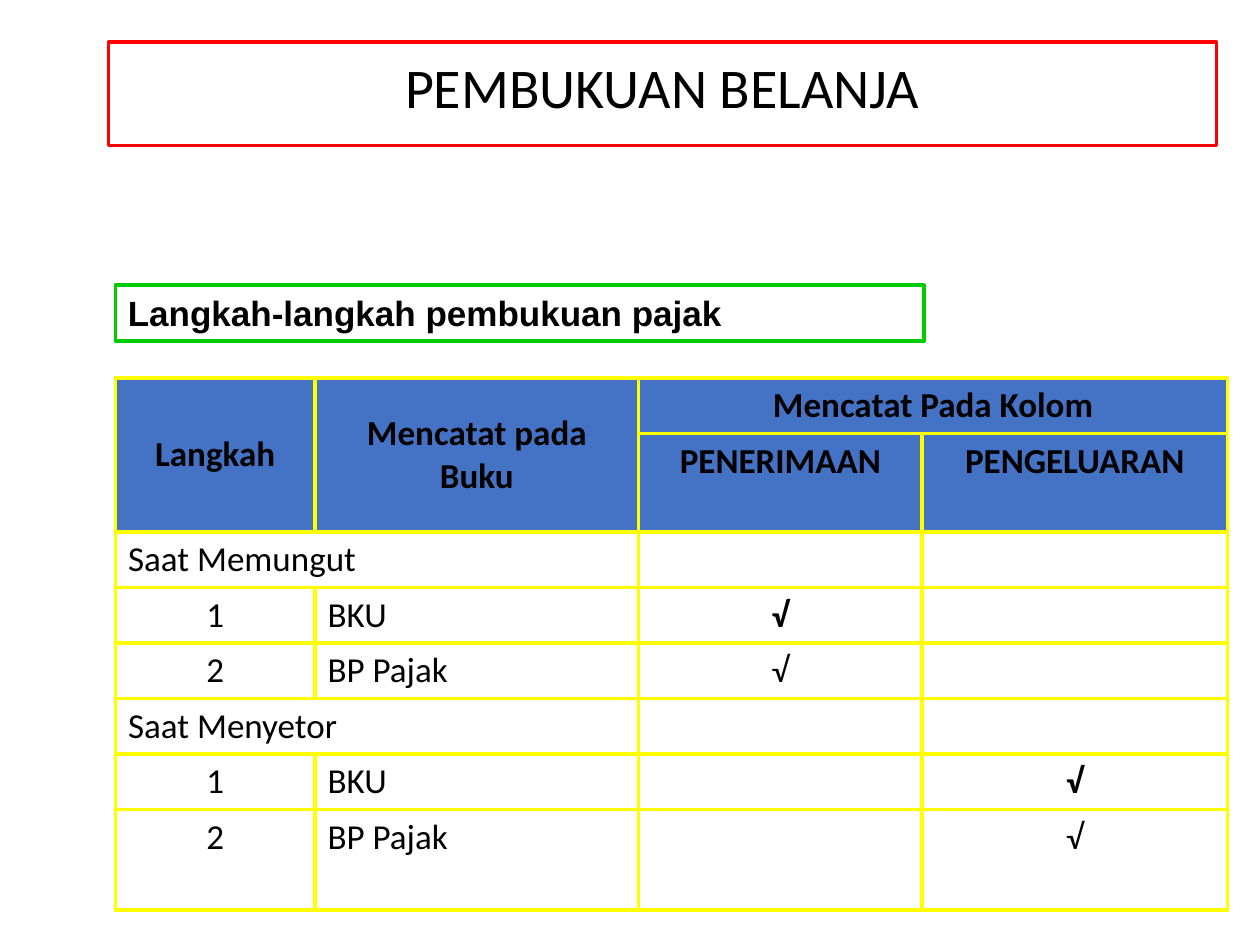
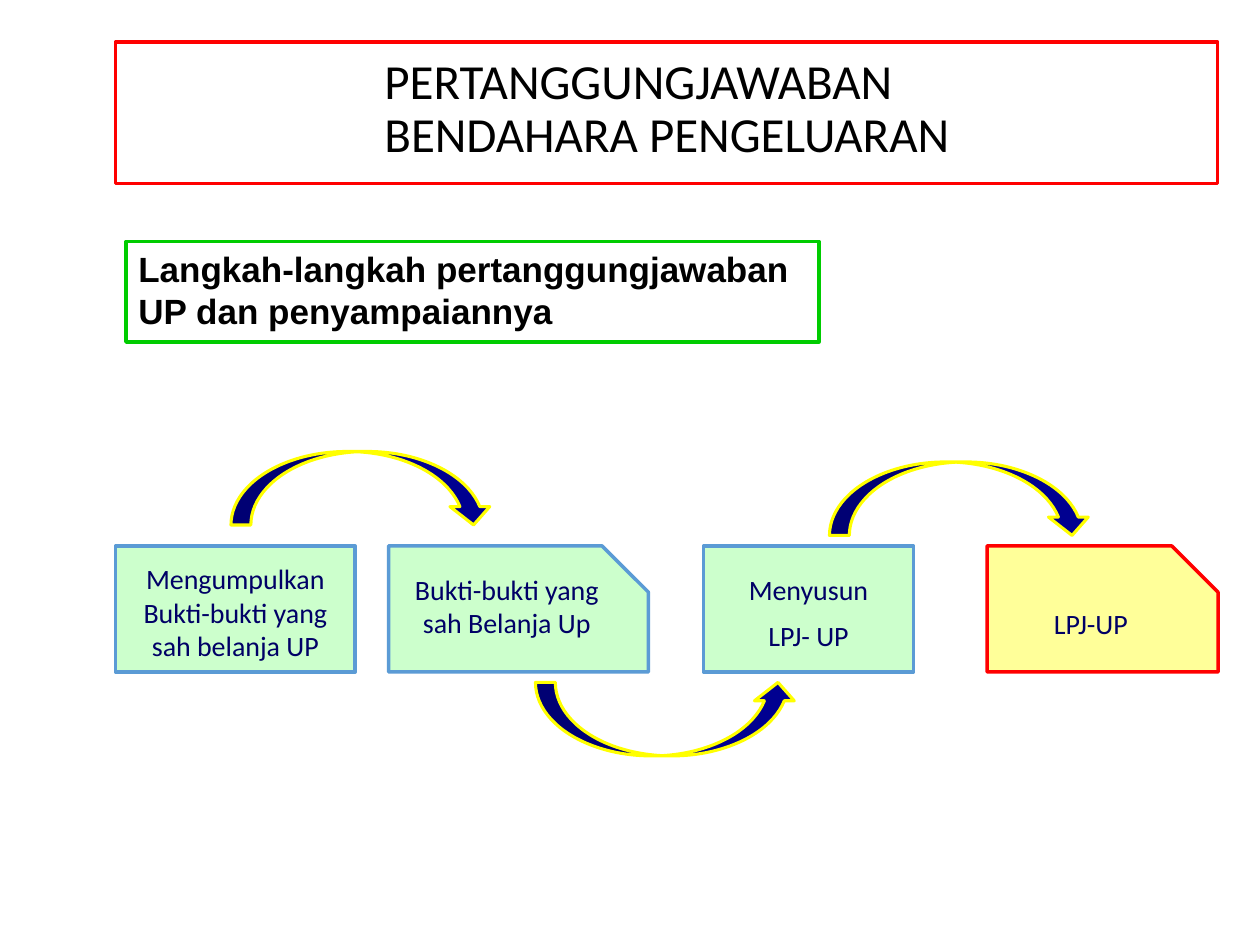
import pptx
import pptx.util
import pptx.dml.color
import pptx.enum.shapes
import pptx.enum.text
import pptx.oxml
import pptx.oxml.ns

Pt = pptx.util.Pt
Kind = pptx.enum.shapes.MSO_SHAPE
Align = pptx.enum.text.PP_ALIGN
Mid = pptx.enum.text.MSO_ANCHOR.MIDDLE
Top = pptx.enum.text.MSO_ANCHOR.TOP

THEME = {
    "ink": "000000", "navy": "000066", "red": "FF0000", "green": "00CC00",
    "yellow": "FFFF00", "head": "4472C4", "mint": "CCFFCC", "cream": "FFFF99",
    "sky": "5B9BD5", "arrow": "000090",
    "body": "Calibri", "label": "Arial",
    "table": 20, "sub": 20, "step": 16,
    "thin": 1.75, "line": 2, "grid": 2.25,
}

BOOK = {
    "title": ("PEMBUKUAN BELANJA", 32, (62, 24, 633, 59)),
    "sub": ("Langkah-langkah pembukuan pajak", (66, 163, 462, 32)),
}
REPORT = {
    "title": ("PERTANGGUNGJAWABAN\nBENDAHARA PENGELUARAN", 28, (66, 24, 630, 81)),
    "sub": ("Langkah-langkah pertanggungjawaban UP dan penyampaiannya",
            (72, 138, 396, 57.5)),
}

ROWS = [
    ("Langkah", "Mencatat pada Buku", "Mencatat Pada Kolom", ""),
    ("", "", "PENERIMAAN", "PENGELUARAN"),
    ("Saat Memungut", "", "", ""),
    ("1", "BKU", "√", ""),
    ("2", "BP Pajak", "√", ""),
    ("Saat Menyetor", "", "", ""),
    ("1", "BKU", "", "√"),
    ("2", "BP Pajak", "", "√"),
]
MERGES = [((0, 0), (1, 0)), ((0, 1), (1, 1)), ((0, 2), (0, 3)),
          ((2, 0), (2, 1)), ((5, 0), (5, 1))]
STRONG = {(3, 2), (6, 3)}
COLS = (114, 185, 162, 174.5)
HIGHS = (31,) * 7 + (57.5,)
GRID = (66, 216)

STEPS = [
    ("Mengumpulkan Bukti-bukti yang sah belanja UP", 66, 137, "mint", "sky", None),
    ("Bukti-bukti yang sah Belanja Up", 222, 148.5, "mint", "sky", 23.4),
    ("Menyusun\nLPJ- UP", 402, 120, "mint", "sky", None),
    ("LPJ-UP", 564, 132, "cream", "red", 3.6),
]
ROW_TOP, ROW_HIGH, SNIP = 312, 72, 26.4
ARROWS = [(132, 258, False), (306, 390, True), (474, 264, False)]
BEND = (0.271, 0.542, 0.25)


def color(name):
    return pptx.dml.color.RGBColor.from_string(THEME[name])


def paint(shape, fill, line, width):
    shape.shadow.inherit = False
    if fill:
        shape.fill.solid()
        shape.fill.fore_color.rgb = color(fill)
    else:
        shape.fill.background()
    shape.line.color.rgb = color(line)
    shape.line.width = Pt(width)


def style(frame, size, face="body", ink="ink", bold=False, align=Align.LEFT,
          gap=0, lead=None):
    for i, par in enumerate(frame.paragraphs):
        par.alignment = align
        par.space_before = Pt(gap if i else 0)
        if lead:
            par.line_spacing = lead
        for run in par.runs:
            run.font.size = Pt(size)
            run.font.name = THEME[face]
            run.font.bold = bold
            run.font.color.rgb = color(ink)


def write(shape, text, pads, anchor, **look):
    frame = shape.text_frame
    frame.word_wrap = True
    frame.vertical_anchor = anchor
    (frame.margin_left, frame.margin_top,
     frame.margin_right, frame.margin_bottom) = map(Pt, pads)
    frame.text = text
    style(frame, **look)
    return frame


def rect(slide, box):
    return slide.shapes.add_shape(Kind.RECTANGLE, *map(Pt, box))


def start(deck, data):
    slide = deck.slides.add_slide(deck.slide_layouts[6])
    text, size, box = data["title"]
    head = rect(slide, box)
    paint(head, None, "red", THEME["thin"])
    frame = write(head, text, (7.2, 3.6, 7.2, 7.2), Mid, size=size, lead=0.9)
    frame._txBody.bodyPr.set("anchorCtr", "1")
    text, box = data["sub"]
    sub = rect(slide, box)
    paint(sub, None, "green", THEME["line"])
    write(sub, text, (7.2, 3.6, 7.2, 3.6), Top, size=THEME["sub"],
          face="label", bold=True)
    return slide


def border(cell):
    props = cell._tc.get_or_add_tcPr()
    for side in "LRTB":
        props.append(pptx.oxml.parse_xml(
            f'<a:ln{side} {pptx.oxml.ns.nsdecls("a")} w="{Pt(THEME["grid"])}">'
            f'<a:solidFill><a:srgbClr val="{THEME["yellow"]}"/></a:solidFill>'
            f'</a:ln{side}>'))


def ledger(slide):
    table = slide.shapes.add_table(
        len(ROWS), len(COLS), *map(Pt, GRID), Pt(sum(COLS)), Pt(sum(HIGHS))).table
    table.first_row = table.horz_banding = False
    for col, wide in zip(table.columns, COLS):
        col.width = Pt(wide)
    for row, high in zip(table.rows, HIGHS):
        row.height = Pt(high)
    for r, row in enumerate(ROWS):
        for c, text in enumerate(row):
            cell = table.cell(r, c)
            border(cell)
            if r < 2:
                cell.fill.solid()
                cell.fill.fore_color.rgb = color("head")
            else:
                cell.fill.background()
            cell.vertical_anchor = Mid if r < 2 and c < 2 else Top
            cell.text_frame.text = text
            left = r > 1 and (c == 1 or not row[1])
            style(cell.text_frame, THEME["table"],
                  bold=r < 2 or (r, c) in STRONG,
                  align=Align.LEFT if left else Align.CENTER)
    for first, last in MERGES:
        table.cell(*first).merge(table.cell(*last))


def snipped(slide, x, wide):
    right, base = x + wide, ROW_TOP + ROW_HIGH
    spots = [(right - SNIP, ROW_TOP), (right, ROW_TOP + SNIP),
             (right, base), (x, base)]
    pen = slide.shapes.build_freeform(Pt(x), Pt(ROW_TOP))
    pen.add_line_segments([(Pt(a), Pt(b)) for a, b in spots], close=True)
    return pen.convert_to_shape()


def flow(slide):
    for text, x, wide, fill, line, foot in STEPS:
        if foot is None:
            shape = rect(slide, (x, ROW_TOP, wide, ROW_HIGH))
            pads = (7.2, 7.2, 7.2, 3.6)
        else:
            shape = snipped(slide, x, wide)
            pads = (7.2, 20, 20.4, foot)
        paint(shape, fill, line, THEME["line"])
        write(shape, text, pads, Mid, size=THEME["step"], ink="navy",
              align=Align.CENTER, gap=7)
    for x, y, flip in ARROWS:
        arrow = slide.shapes.add_shape(
            Kind.CURVED_DOWN_ARROW, Pt(x), Pt(y), Pt(150), Pt(42))
        for i, bend in enumerate(BEND):
            arrow.adjustments[i] = bend
        if flip:
            arrow._element.spPr.xfrm.set("flipV", "1")
        paint(arrow, "arrow", "yellow", THEME["thin"])


def main():
    deck = pptx.Presentation()
    deck.slide_width, deck.slide_height = Pt(720), Pt(540)
    ledger(start(deck, BOOK))
    flow(start(deck, REPORT))
    deck.save("out.pptx")


if __name__ == "__main__":
    main()
